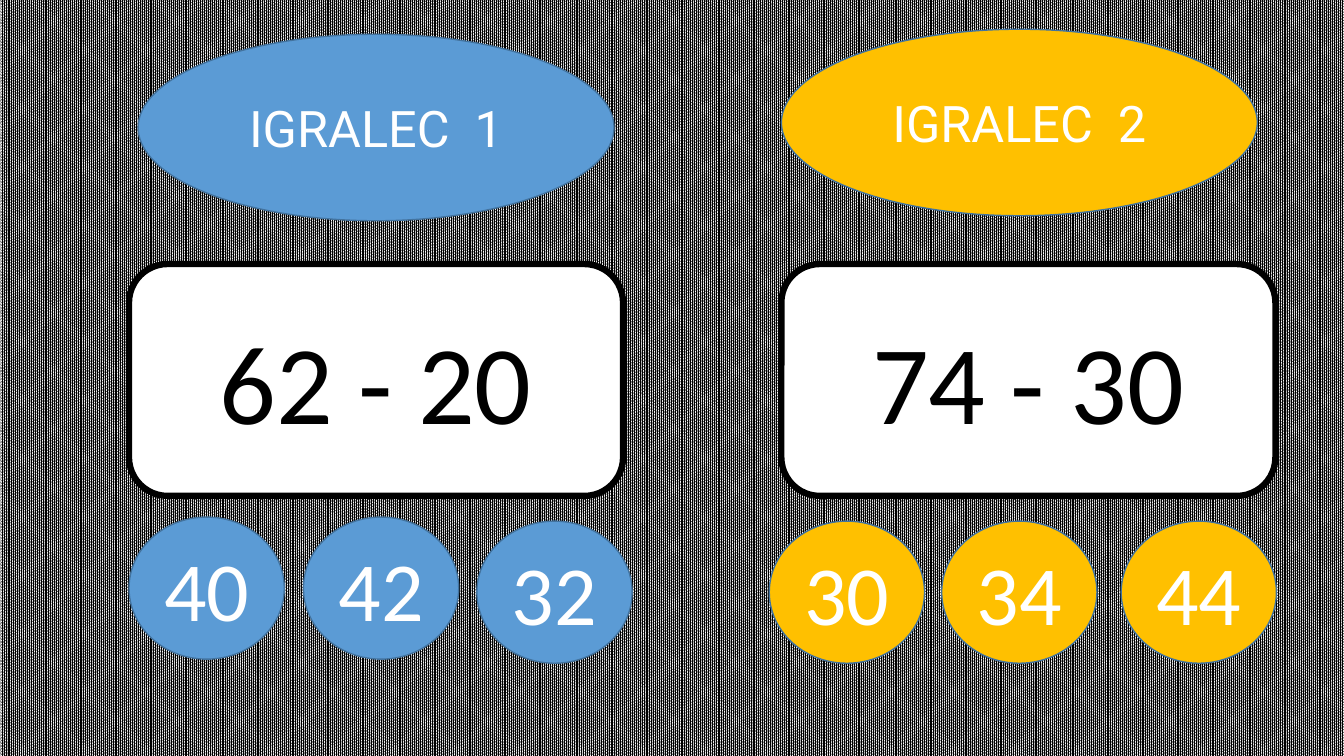
from pptx import Presentation
from pptx.dml.color import RGBColor
from pptx.enum.dml import MSO_PATTERN
from pptx.enum.shapes import MSO_SHAPE
from pptx.enum.text import MSO_ANCHOR, PP_ALIGN
from pptx.util import Inches, Pt


def rgb(value):
    return RGBColor.from_string(value)


class GameSlide:
    """Draws the parts of a two-player arithmetic game on one slide."""

    BLACK, WHITE, OUTLINE = "000000", "FFFFFF", "43739E"
    BODY, TITLE = "Calibri", "Roboto"

    def __init__(self, prs):
        self.s = prs.slides.add_slide(prs.slide_layouts[6])

    def background(self):
        fill = self.s.background.fill
        fill.patterned()
        fill.pattern = MSO_PATTERN.PERCENT_90
        fill.fore_color.rgb = rgb(self.BLACK)
        fill.back_color.rgb = rgb(self.WHITE)

    def shape(self, kind, box, fill, line, width, text, size, font, color):
        sp = self.s.shapes.add_shape(kind, *map(Inches, box))
        sp.shadow.inherit = False
        sp.fill.solid()
        sp.fill.fore_color.rgb = rgb(fill)
        sp.line.color.rgb = rgb(line)
        sp.line.width = Pt(width)
        tf = sp.text_frame
        tf.word_wrap = True
        tf.vertical_anchor = MSO_ANCHOR.MIDDLE
        p = tf.paragraphs[0]
        p.alignment = PP_ALIGN.CENTER
        r = p.add_run()
        r.text = text
        r.font.size = Pt(size)
        r.font.name = font
        r.font.color.rgb = rgb(color)

    def ellipse(self, box, fill, text, size, font):
        self.shape(MSO_SHAPE.OVAL, box, fill, self.OUTLINE, 1,
                   text, size, font, self.WHITE)

    def player(self, x, y, fill, text):
        self.ellipse((x, y, 4.72, 1.85), fill, text, 36, self.TITLE)

    def task(self, x, text):
        self.shape(MSO_SHAPE.ROUNDED_RECTANGLE, (x, 2.62, 4.9, 2.3), self.WHITE,
                   self.BLACK, 4.5, text, 80, self.BODY, self.BLACK)

    def answer(self, x, y, fill, text):
        self.ellipse((x, y, 1.54, 1.41), fill, text, 60, self.BODY)


PLAYERS = [
    ("IGRALEC  1", 1.37, 0.34, "5B9BD5", "62 - 20", 1.28,
     [("40", 1.28, 5.13), ("42", 3.01, 5.13), ("32", 4.73, 5.17)]),
    ("IGRALEC  2", 7.75, 0.29, "FFC000", "74 - 30", 7.75,
     [("30", 7.63, 5.17), ("34", 9.34, 5.17), ("44", 11.12, 5.17)]),
]


def main():
    prs = Presentation()
    prs.slide_width, prs.slide_height = Inches(13.33), Inches(7.5)
    game = GameSlide(prs)
    game.background()
    for name, x, y, color, task, task_x, answers in PLAYERS:
        game.task(task_x, task)
        game.player(x, y, color, name)
        for text, answer_x, answer_y in answers:
            game.answer(answer_x, answer_y, color, text)
    prs.save("out.pptx")


if __name__ == "__main__":
    main()
